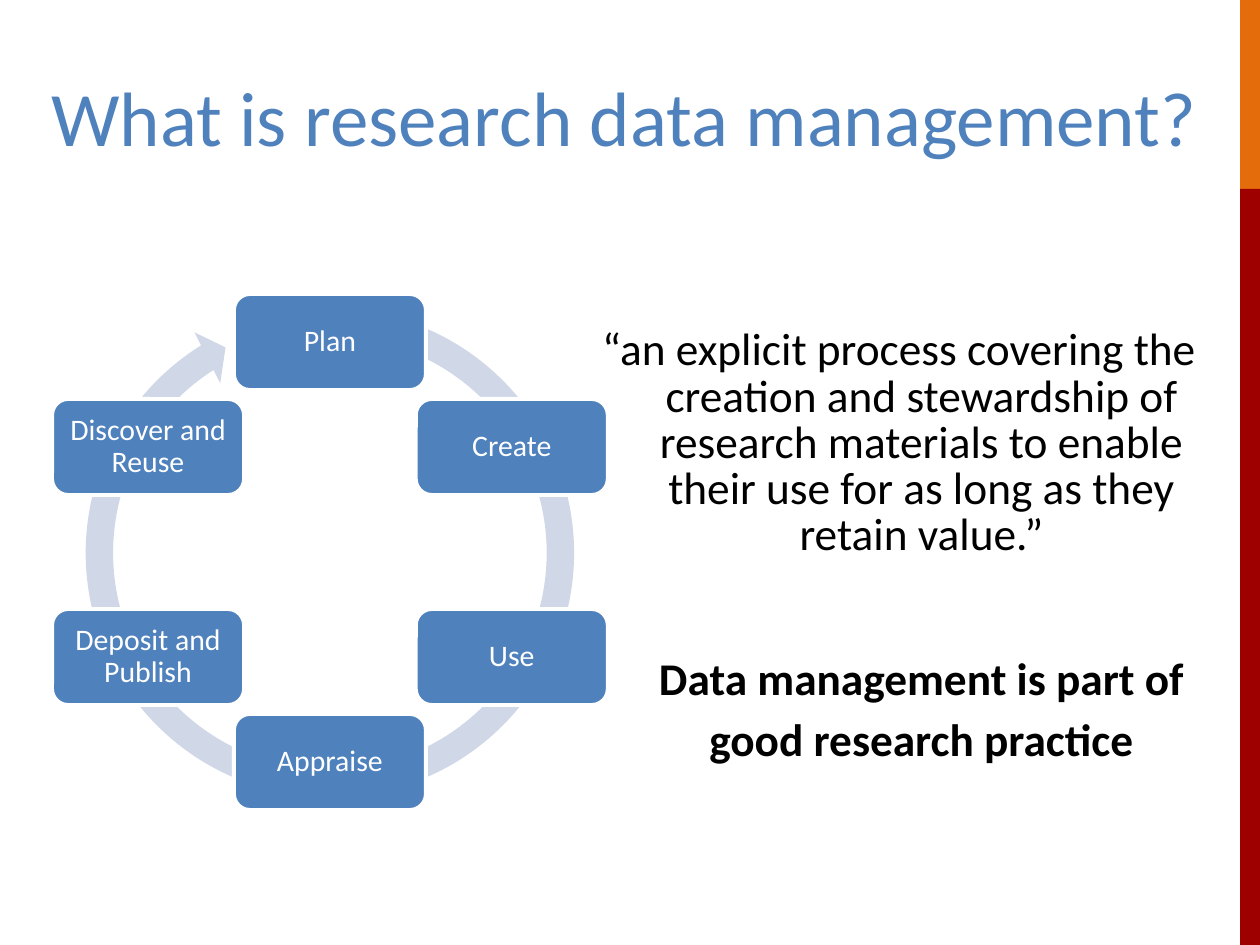
from math import cos, radians, sin

from pptx import Presentation
from pptx.dml.color import RGBColor
from pptx.enum.shapes import MSO_SHAPE as Shape
from pptx.enum.text import MSO_ANCHOR as Anchor, MSO_AUTO_SIZE as AutoSize, PP_ALIGN as Align
from pptx.util import Emu, Pt

BLUE = RGBColor(0x4F, 0x81, 0xBD)
PALE_BLUE = RGBColor(0xD0, 0xD8, 0xE8)
ORANGE = RGBColor(0xE4, 0x6C, 0x0A)
DARK_RED = RGBColor(0x9E, 0x00, 0x00)
WHITE = RGBColor(0xFF, 0xFF, 0xFF)
BLACK = RGBColor(0x00, 0x00, 0x00)


def px(length):
    return Emu(round(length * 914400 / 126))


def add_text(paragraph, text, size, color, spacing, bold=False):
    paragraph.alignment = Align.CENTER
    paragraph.line_spacing = spacing
    run = paragraph.add_run()
    run.text = text
    run.font.name = "Calibri"
    run.font.size = Pt(size)
    run.font.bold = bold
    run.font.color.rgb = color


presentation = Presentation()
presentation.slide_width, presentation.slide_height = px(1260), px(945)
slide = presentation.slides.add_slide(presentation.slide_layouts[5])
shapes = slide.shapes

# Title
title = shapes.title
title.left, title.top, title.width, title.height = px(13), px(74), px(1223), px(118)
title_frame = title.text_frame
title_frame.auto_size = AutoSize.NONE
title_frame.vertical_anchor = Anchor.TOP
title_frame.margin_top = px(10)
add_text(title_frame.paragraphs[0], "What is research data management?", 44, BLUE, 0.85)

# Side bars
for top, height, color in [(0, 189, ORANGE), (189, 756, DARK_RED)]:
    bar = shapes.add_shape(Shape.RECTANGLE, px(1240), px(top), px(20), px(height))
    bar.shadow.inherit = False
    bar.fill.solid()
    bar.fill.fore_color.rgb = color
    bar.line.fill.background()

# Definition and conclusion
body = shapes.add_textbox(px(563), px(297), px(672), px(519))
body_frame = body.text_frame
body_frame.word_wrap = True
body_frame.margin_top = px(32)
quote = body_frame.paragraphs[0]
add_text(
    quote,
    "“an explicit process covering the creation and stewardship of research "
    "materials to enable their use for as long as they retain value.”",
    25.9, BLACK, 0.85,
)
quote.space_after = Pt(6)
quote_properties = quote._p.get_or_add_pPr()
quote_properties.set("marL", str(px(45)))
quote_properties.set("indent", str(px(-45)))
for text, space_before in [("Data management is part of", 50), ("good research practice", 2.5)]:
    paragraph = body_frame.add_paragraph()
    add_text(paragraph, text, 25.9, BLACK, 0.85, bold=True)
    paragraph.space_before = Pt(space_before)
    paragraph.space_after = Pt(6)
    paragraph._p.get_or_add_pPr().set("marL", str(px(45)))

# Cycle arrow
arrow = shapes.add_shape(Shape.CIRCULAR_ARROW, px(71), px(294), px(518), px(518))
for index, value in enumerate([0.053, 3.126, 142.724, 171.012, 0.055]):
    arrow.adjustments[index] = value
arrow.shadow.inherit = False
arrow.fill.solid()
arrow.fill.fore_color.rgb = PALE_BLUE
arrow.line.fill.background()

# Cycle stages, clockwise from the top
STAGES = ["Plan", "Create", "Use", "Appraise", "Deposit and Publish", "Discover and Reuse"]
CENTER_X, CENTER_Y, RADIUS = 330, 552, 210
STAGE_WIDTH, STAGE_HEIGHT = 192, 96
for index, name in enumerate(STAGES):
    angle = radians(index * 360 / len(STAGES))
    left = CENTER_X + RADIUS * sin(angle) - STAGE_WIDTH / 2
    top = CENTER_Y - RADIUS * cos(angle) - STAGE_HEIGHT / 2
    stage = shapes.add_shape(
        Shape.ROUNDED_RECTANGLE, px(left), px(top), px(STAGE_WIDTH), px(STAGE_HEIGHT)
    )
    stage.shadow.inherit = False
    stage.fill.solid()
    stage.fill.fore_color.rgb = BLUE
    stage.line.color.rgb = WHITE
    stage.line.width = Pt(2.25)
    frame = stage.text_frame
    frame.word_wrap = True
    frame.vertical_anchor = Anchor.MIDDLE
    frame.margin_left = frame.margin_right = px(9)
    frame.margin_top = frame.margin_bottom = px(9)
    add_text(frame.paragraphs[0], name, 17, WHITE, 0.9)

presentation.save("out.pptx")
